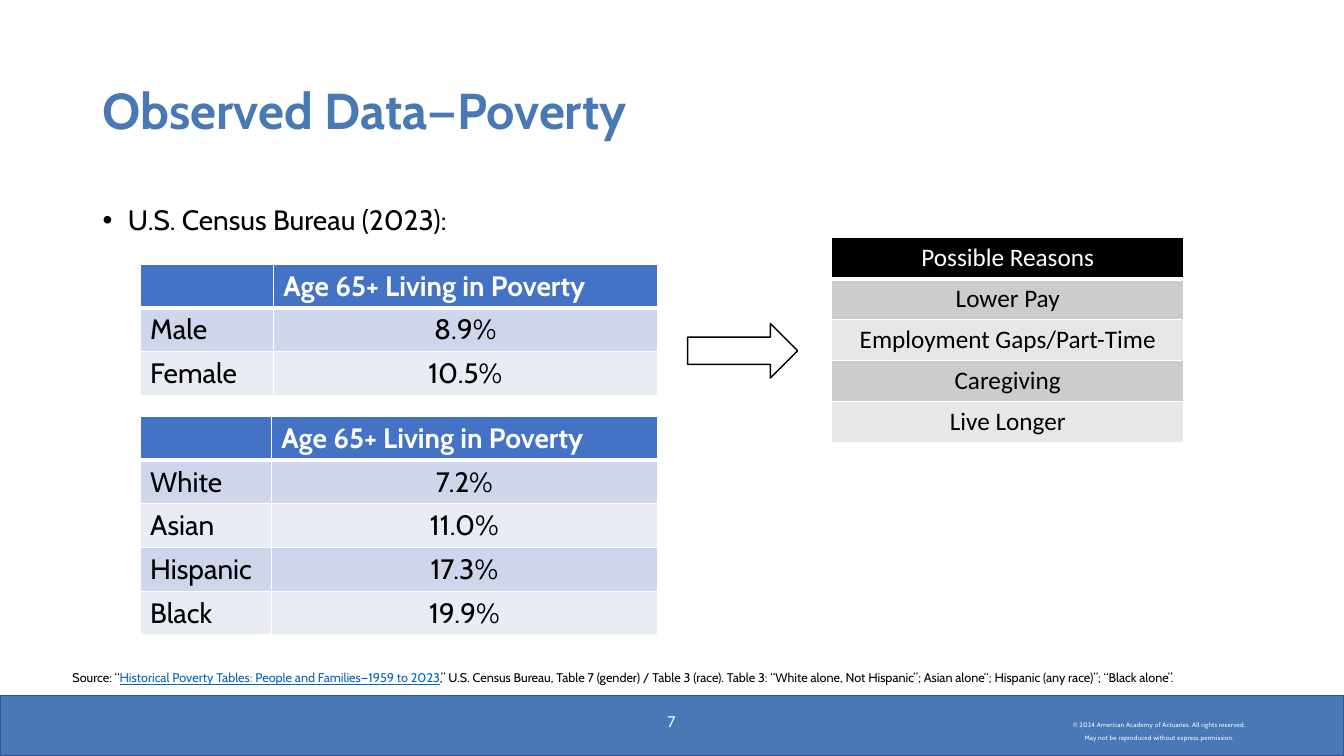
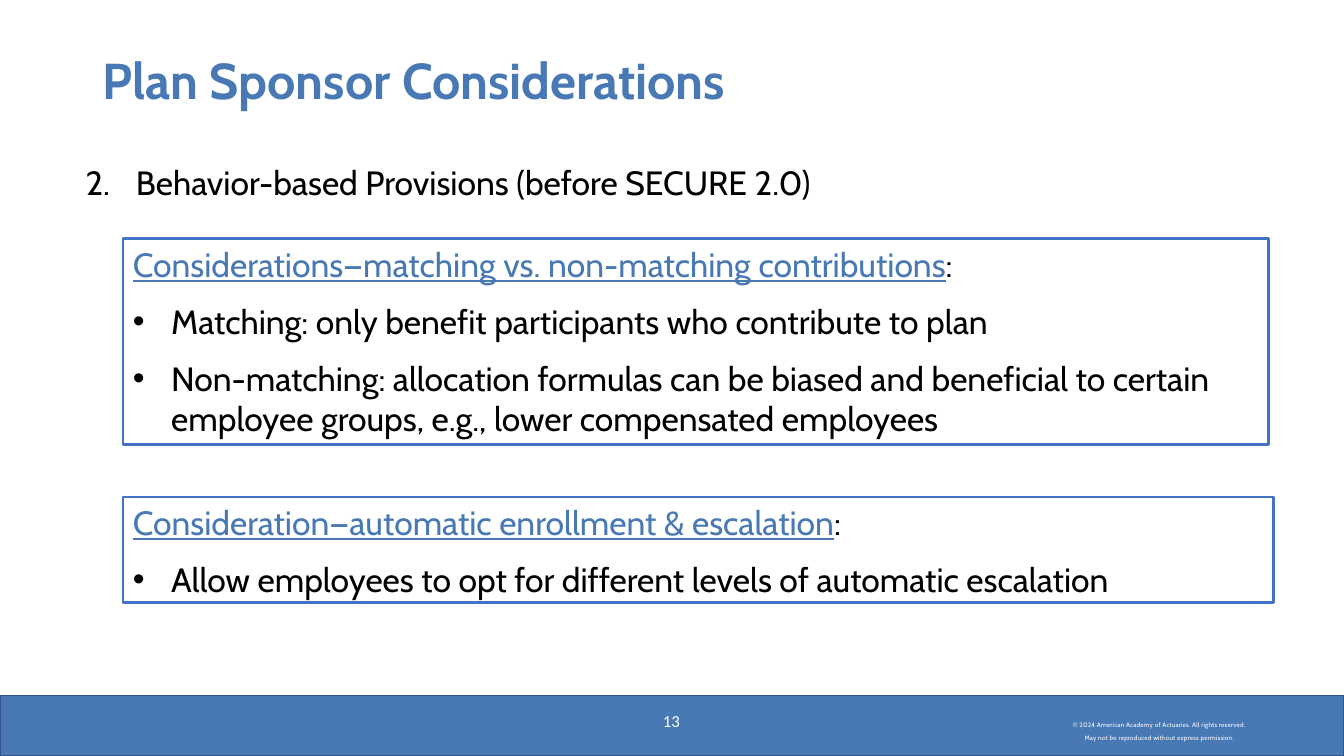
"""Build two slides on poverty data and plan sponsor considerations."""
from lxml import etree
from pptx import Presentation
from pptx.dml.color import RGBColor
from pptx.enum.shapes import MSO_SHAPE
from pptx.enum.text import MSO_ANCHOR, PP_ALIGN
from pptx.oxml.ns import qn
from pptx.util import Inches, Pt

RECTANGLE, RIGHT_ARROW = MSO_SHAPE.RECTANGLE, MSO_SHAPE.RIGHT_ARROW
LEFT, CENTER = PP_ALIGN.LEFT, PP_ALIGN.CENTER
TOP, MIDDLE = MSO_ANCHOR.TOP, MSO_ANCHOR.MIDDLE

COLORS = {
    "brand": "4879B4", "band_line": "325491", "accent": "4472C4",
    "link": "0563C1", "white": "FFFFFF", "black": "000000",
    "blue_dark": "CFD5EA", "blue_light": "E9EBF5",
    "gray_dark": "CCCCCC", "gray_light": "E7E7E7",
}
BLUE_TABLE = ("accent", "blue_dark", "blue_light")
GRAY_TABLE = ("black", "gray_dark", "gray_light")
HEADING_FONT, PLAIN_FONT = "Cabin", "Calibri"
COPYRIGHT = (
    "© 2024 American Academy of Actuaries. All rights reserved.",
    "May not be reproduced without express permission.",
)


def rgb(name):
    return RGBColor.from_string(COLORS[name])


class Deck:
    def __init__(self):
        self.presentation = Presentation()
        self.presentation.slide_width = Inches(13.33)
        self.presentation.slide_height = Inches(7.5)
        self.slide = None

    def add_slide(self, title, number, title_top):
        layout = self.presentation.slide_layouts[6]
        self.slide = self.presentation.slides.add_slide(layout)
        self.shape(RECTANGLE, 0, 6.9, 13.33, 0.6, "brand", "band_line", 1)
        self.copyright_lines()
        frame = self.text_box(0.92, title_top, 11.5, 1.45, MIDDLE)
        self.paragraph(frame, title, 36, "brand", bold=True, line_spacing=0.9)
        frame = self.text_box(5.16, 6.95, 3, 0.4, MIDDLE)
        self.paragraph(frame, number, 12, "white", font=PLAIN_FONT,
                       align=CENTER)

    def copyright_lines(self):
        frame = self.text_box(10.03, 7.09, 2.94, 0.4)
        frame.word_wrap = False
        for line in COPYRIGHT:
            paragraph = self.paragraph(frame, line, 8, "white", align=CENTER)
            properties = paragraph.runs[0]._r.get_or_add_rPr()
            properties.set("baseline", "30000")
            properties.set("spc", "10")

    def shape(self, kind, left, top, width, height, fill, line, line_width):
        shape = self.slide.shapes.add_shape(
            kind, Inches(left), Inches(top), Inches(width), Inches(height))
        shape.shadow.inherit = False
        if fill:
            shape.fill.solid()
            shape.fill.fore_color.rgb = rgb(fill)
        else:
            shape.fill.background()
        shape.line.color.rgb = rgb(line)
        shape.line.width = Pt(line_width)
        return shape

    def text_box(self, left, top, width, height, anchor=TOP):
        box = self.slide.shapes.add_textbox(
            Inches(left), Inches(top), Inches(width), Inches(height))
        frame = box.text_frame
        frame.word_wrap = True
        frame.vertical_anchor = anchor
        return frame

    def paragraph(self, frame, text, size, color, font=HEADING_FONT,
                  bold=False, align=LEFT, line_spacing=None, before=0,
                  after=0, bullet=None, start=None, indent=0):
        paragraph = frame.paragraphs[0]
        if paragraph.runs:
            paragraph = frame.add_paragraph()
        paragraph.alignment = align
        paragraph.space_before = Pt(before)
        paragraph.space_after = Pt(after)
        if line_spacing:
            paragraph.line_spacing = line_spacing
        if bullet or start:
            self.mark(paragraph, bullet, start, indent)
        paragraph.font.name = font
        paragraph.font.size = Pt(size)
        paragraph.font.bold = bold
        paragraph.font.color.rgb = rgb(color)
        runs = [(text, None, False)] if isinstance(text, str) else text
        for words, run_color, underline in runs:
            run = paragraph.add_run()
            run.text = words
            if run_color:
                run.font.color.rgb = rgb(run_color)
            if underline:
                run.font.underline = True
        return paragraph

    def mark(self, paragraph, bullet, start, indent):
        properties = paragraph._p.get_or_add_pPr()
        properties.set("marL", str(Inches(indent)))
        properties.set("indent", str(-Inches(indent)))
        if bullet:
            etree.SubElement(properties, qn("a:buFont"), typeface="Arial")
            etree.SubElement(properties, qn("a:buChar"), char=bullet)
        else:
            etree.SubElement(properties, qn("a:buAutoNum"),
                             type="arabicPeriod", startAt=str(start))

    def table(self, left, top, height, widths, rows, palette, size,
              font=HEADING_FONT, bold_header=True):
        table = self.slide.shapes.add_table(
            len(rows), len(widths), Inches(left), Inches(top),
            Inches(sum(widths)), Inches(height)).table
        for column, width in zip(table.columns, widths):
            column.width = Inches(width)
        header, *bands = palette
        for row_index, row in enumerate(rows):
            is_header = row_index == 0
            fill = header if is_header else bands[(row_index - 1) % 2]
            for column_index, text in enumerate(row):
                cell = table.cell(row_index, column_index)
                cell.fill.solid()
                cell.fill.fore_color.rgb = rgb(fill)
                self.borders(cell, top=3 if row_index == 1 else 1,
                             bottom=3 if is_header else 1)
                if text:
                    left_aligned = len(row) > 1 and (
                        is_header or column_index == 0)
                    self.paragraph(cell.text_frame, text, size,
                                   "white" if is_header else "black", font,
                                   bold=is_header and bold_header,
                                   align=LEFT if left_aligned else CENTER)

    def borders(self, cell, top, bottom):
        properties = cell._tc.get_or_add_tcPr()
        sides = (("L", 1), ("R", 1), ("T", top), ("B", bottom))
        for index, (side, width) in enumerate(sides):
            line = etree.Element(qn(f"a:ln{side}"), w=str(Pt(width)))
            fill = etree.SubElement(line, qn("a:solidFill"))
            etree.SubElement(fill, qn("a:srgbClr"), val=COLORS["white"])
            properties.insert(index, line)

    def panel(self, top, width, height, heading, items, last_after=0):
        shape = self.shape(RECTANGLE, 1.22, top, width, height,
                           None, "accent", 2)
        frame = shape.text_frame
        frame.word_wrap = True
        frame.vertical_anchor = TOP
        self.paragraph(frame, [(heading, "brand", True), (":", None, False)],
                       24, "black")
        for item in items:
            self.paragraph(frame, item, 24, "black", line_spacing=Pt(28.8),
                           before=12, after=last_after, bullet="•",
                           indent=0.38)


def add_poverty_slide(deck):
    deck.add_slide("Observed Data—Poverty", "7", 0.4)
    frame = deck.text_box(0.92, 2, 11.5, 0.5)
    deck.paragraph(frame, "U.S. Census Bureau (2023):", 20, "black",
                   line_spacing=0.9, bullet="•", indent=0.25)
    header = ("", "Age 65+ Living in Poverty")
    genders = [header, ("Male", "8.9%"), ("Female", "10.5%")]
    races = [header, ("White", "7.2%"), ("Asian", "11.0%"),
             ("Hispanic", "17.3%"), ("Black", "19.9%")]
    reasons = [("Possible Reasons",), ("Lower Pay",),
               ("Employment Gaps/Part-Time",), ("Caregiving",),
               ("Live Longer",)]
    deck.table(1.39, 2.62, 1.3, (1.32, 3.81), genders, BLUE_TABLE, 20)
    deck.table(1.39, 4.13, 2.17, (1.3, 3.83), races, BLUE_TABLE, 20)
    deck.table(8.25, 2.36, 2.03, (3.49,), reasons, GRAY_TABLE, 18,
               PLAIN_FONT, bold_header=False)
    deck.shape(RIGHT_ARROW, 6.82, 3.21, 1.09, 0.54, "white", "black", 1)
    frame = deck.text_box(0.62, 6.6, 12.09, 0.25)
    deck.paragraph(frame, [
        ("Source: “", None, False),
        ("Historical Poverty Tables: People and Families—1959 to 2023",
         "link", True),
        (",” U.S. Census Bureau, Table 7 (gender) / Table 3 (race). "
         "Table 3: “White alone, Not Hispanic”; Asian alone“; "
         "Hispanic (any race)”; “Black alone”.", None, False),
    ], 9, "black")


def add_sponsor_slide(deck):
    deck.add_slide("Plan Sponsor Considerations", "13", 0.1)
    frame = deck.text_box(0.75, 1.52, 11.67, 0.51)
    deck.paragraph(frame, "Behavior-based Provisions (before SECURE 2.0)", 24,
                   "black", line_spacing=1.1, start=2, indent=0.5)
    deck.panel(2.37, 11.36, 2.04,
               "Considerations—matching vs. non-matching contributions",
               ["Matching: only benefit participants who contribute to plan",
                "Non-matching: allocation formulas can be biased and "
                "beneficial to certain employee groups, e.g., lower "
                "compensated employees"])
    deck.panel(4.93, 11.41, 1.05,
               "Consideration—automatic enrollment & escalation",
               ["Allow employees to opt for different levels of automatic "
                "escalation"], last_after=6)


def main():
    deck = Deck()
    add_poverty_slide(deck)
    add_sponsor_slide(deck)
    deck.presentation.save("out.pptx")


if __name__ == "__main__":
    main()
